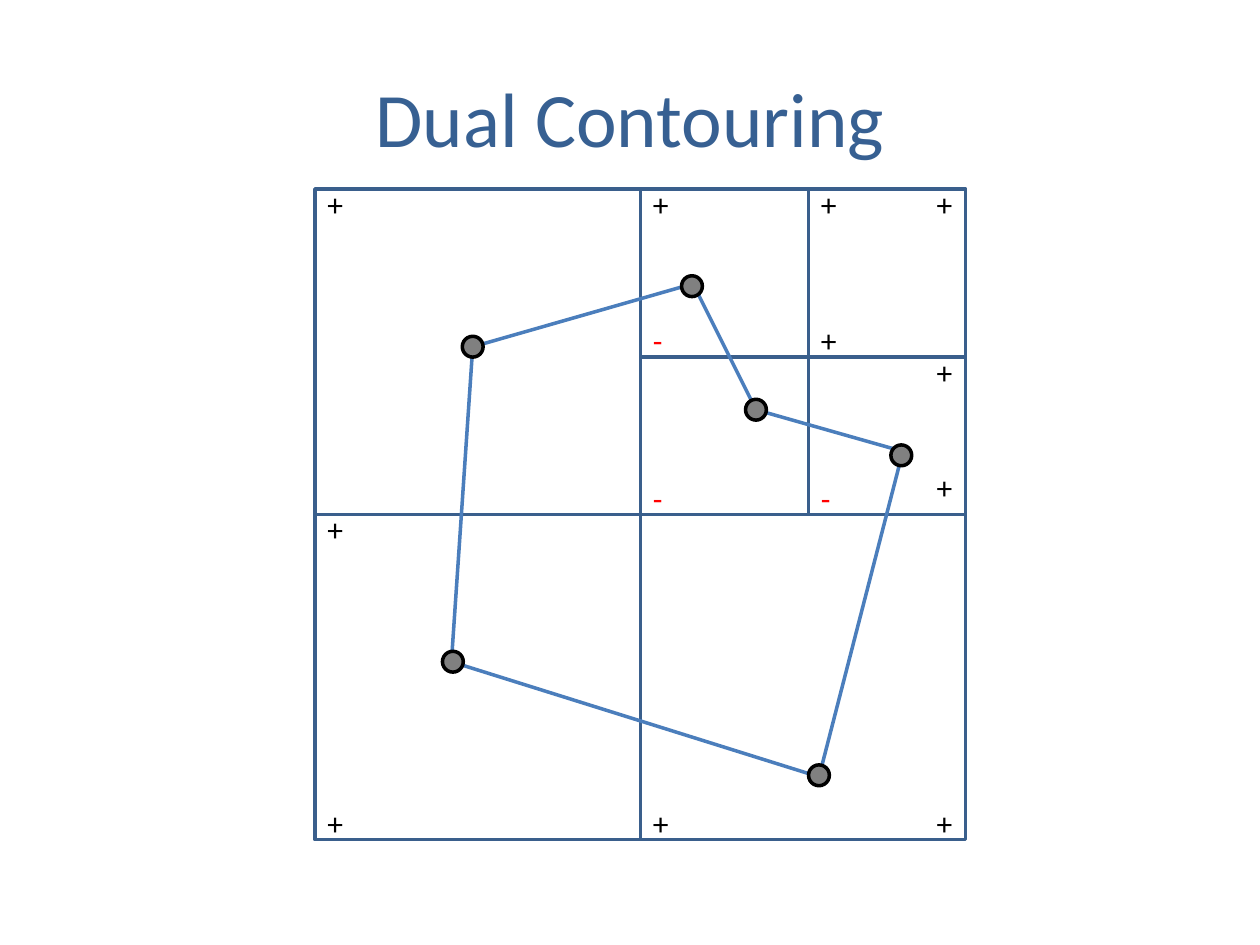
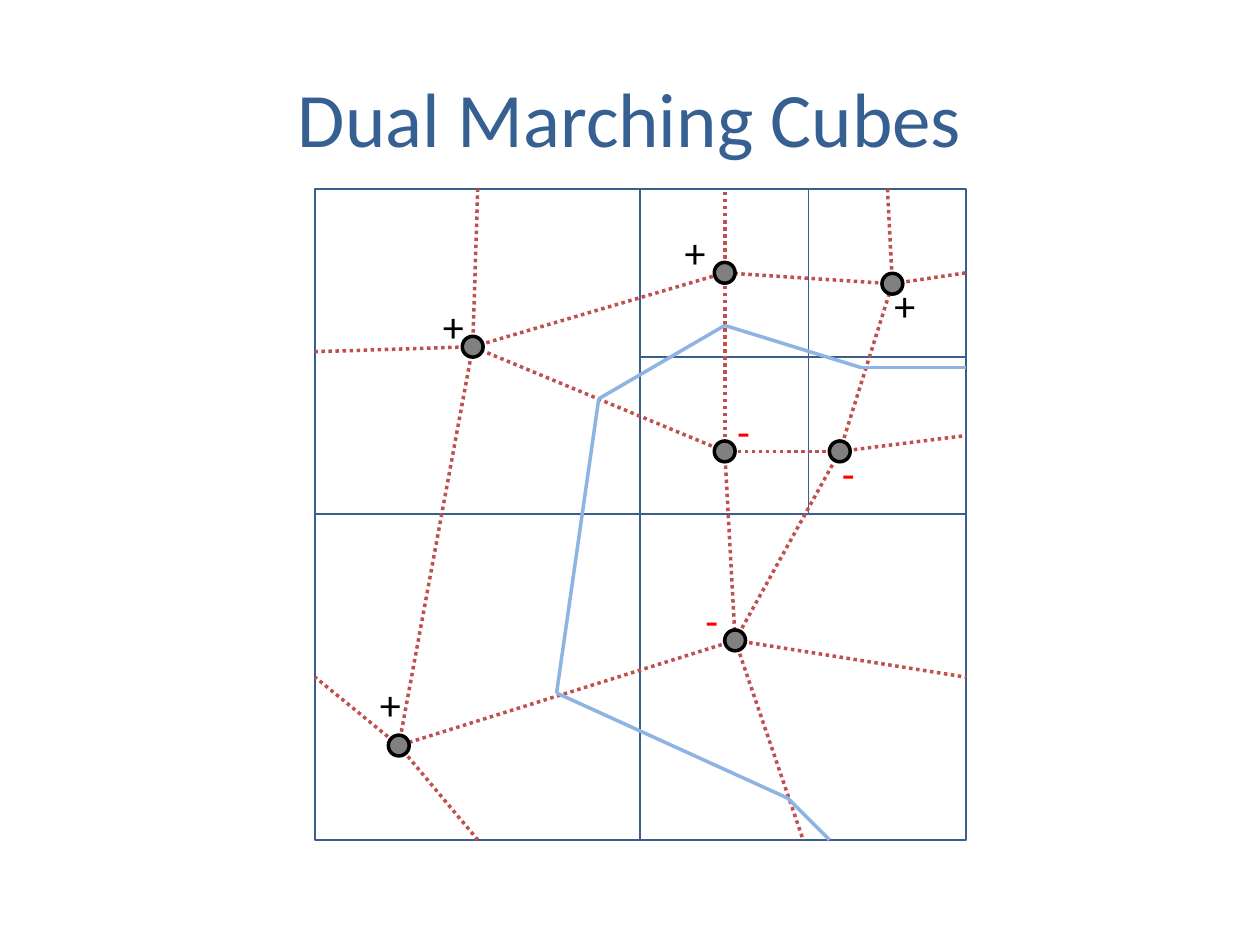
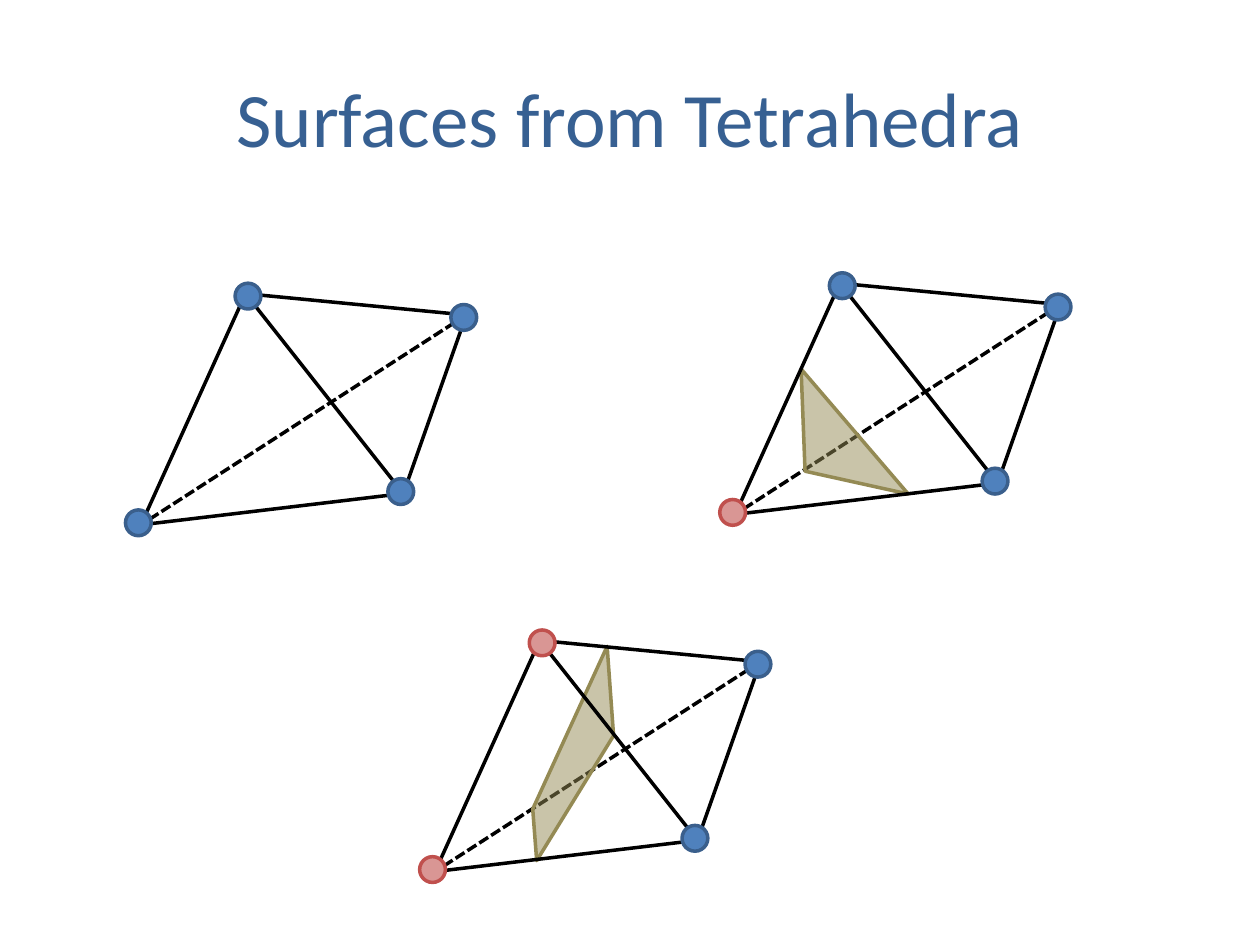
from itertools import pairwise

from lxml import etree
from pptx import Presentation
from pptx import util as u
from pptx.dml.color import RGBColor
from pptx.enum import dml, shapes, text
from pptx.oxml import ns

COLORS = {
    "title": "376092", "grid": "3A5F8C", "contour": "4B7EBC", "surface": "8EB4E3",
    "dual": "C0504D", "plus": "000000", "minus": "FF0000", "ink": "000000",
    "sample": "808080", "outside": "4F81BD", "outside_rim": "3A5F8C",
    "inside": "D99694", "inside_rim": "C0504D", "cut": "948A54",
}
FONT = "Calibri"
DOTTED = dml.MSO_LINE.ROUND_DOT
DASHED = dml.MSO_LINE.SQUARE_DOT


def style(shape, fill, rim, width=2):
    shape.shadow.inherit = False
    if fill:
        shape.fill.solid()
        shape.fill.fore_color.rgb = RGBColor.from_string(COLORS[fill])
    else:
        shape.fill.background()
    shape.line.color.rgb = RGBColor.from_string(COLORS[rim])
    shape.line.width = u.Pt(width)


def add_edge(parent, start, end, color, dash=None):
    edge = parent.add_connector(shapes.MSO_CONNECTOR.STRAIGHT,
                                *[u.Cm(value) for value in (*start, *end)])
    edge.line.color.rgb = RGBColor.from_string(COLORS[color])
    edge.line.width = u.Pt(2)
    if dash:
        edge.line.dash_style = dash
    etree.SubElement(edge._element.spPr, ns.qn("a:effectLst"))


prs = Presentation()
prs.slide_width, prs.slide_height = u.Cm(25.4), u.Cm(19.05)

# Titled slides
slides = []
for heading in ("Dual Contouring", "Dual Marching Cubes", "Surfaces from Tetrahedra"):
    slide = prs.slides.add_slide(prs.slide_layouts[5])
    title = slide.shapes.title
    title.left, title.top = u.Cm(1.27), u.Cm(0.76)
    title.width, title.height = u.Cm(22.86), u.Cm(3.18)
    title.text_frame.vertical_anchor = text.MSO_ANCHOR.MIDDLE
    paragraph = title.text_frame.paragraphs[0]
    paragraph.alignment = text.PP_ALIGN.CENTER
    run = paragraph.add_run()
    run.text = heading
    run.font.size, run.font.name = u.Pt(44), FONT
    run.font.color.rgb = RGBColor.from_string(COLORS["title"])
    slides.append(slide)

# Quadtree: grid lines, and cells as left, top, right, bottom line numbers
columns = (6.35, 12.91, 16.3, 19.47)
rows = (3.81, 7.2, 10.37, 16.93)
cells = ((0, 0, 1, 2), (0, 2, 1, 3), (1, 2, 3, 3), (1, 0, 2, 1),
         (1, 1, 2, 2), (2, 0, 3, 1), (2, 1, 3, 2))
left, right, top, bottom = columns[0], columns[-1], rows[0], rows[-1]

# Dual contouring: signs at cell corners, one vertex per crossed cell
corner_signs = [
    ("+", 6.35, 3.6), ("+", 12.91, 3.6), ("+", 16.3, 3.6), ("+", 18.63, 3.6),
    ("-", 12.91, 6.35), ("+", 16.3, 6.35), ("+", 18.63, 6.99),
    ("-", 12.91, 9.53), ("-", 16.3, 9.53), ("+", 18.63, 9.31),
    ("+", 6.35, 10.16), ("+", 6.35, 16.09), ("+", 12.91, 16.09), ("+", 18.63, 16.09),
]
contour = [(9.53, 6.99), (13.97, 5.72), (15.24, 8.26),
           (18.2, 9.1), (16.51, 15.66), (9.1, 13.34)]
contour_edges = [(*edge, "contour") for edge in pairwise(contour + contour[:1])]
contour_vertices = [(9.53, 6.99), (13.95, 5.77), (15.24, 8.26),
                    (18.17, 9.18), (16.51, 15.63), (9.13, 13.34)]

# Dual marching cubes: signs at samples, dual grid, surface across it
sample_signs = [
    ("+", 8.68, 5.93), ("-", 14.61, 8.04), ("+", 13.55, 4.45), ("+", 7.41, 13.55),
    ("+", 17.78, 5.5), ("-", 13.97, 11.85), ("-", 16.72, 8.89),
]
samples = {"NW": (9.53, 6.99), "N": (14.61, 5.5), "NE": (17.99, 5.72),
           "E": (16.93, 9.1), "mid": (14.61, 9.1), "SE": (14.82, 12.91),
           "SW": (8.04, 15.03)}
neighbours = [("NW", "N"), ("mid", "N"), ("NE", "N"), ("E", "NE"), ("E", "mid"),
              ("mid", "SE"), ("SE", "E"), ("SW", "NW"), ("SE", "SW"), ("mid", "NW")]
border_links = [
    ("SW", (9.63, bottom)), ("SW", (left, 13.65)), ("NW", (left, 7.09)),
    ("NW", (9.63, top)), ("SE", (16.19, bottom)), ("SE", (right, 13.65)),
    ("E", (right, 8.78)), ("NE", (right, 5.5)), ("N", (14.61, top)), ("NE", (17.89, top)),
]
surface = [(right, 7.41), (17.36, 7.41), (14.61, 6.56), (12.07, 8.04),
           (11.22, 13.97), (15.88, 16.09), (16.72, bottom)]
dual_edges = [(samples[a], samples[b], "dual", DOTTED) for a, b in neighbours]
dual_edges += [(samples[a], end, "dual", DOTTED) for a, end in border_links]
dual_edges += [(*edge, "surface") for edge in pairwise(surface)]

# Both quadtree slides: slide, grid width, sign size, sign height, signs, edges, vertices
diagrams = (
    (slides[0], 2, 18, 1.03, corner_signs, contour_edges, contour_vertices),
    (slides[1], 1, 24, 1.27, sample_signs, dual_edges, samples.values()),
)
for slide, grid_width, sign_size, sign_height, signs, edges, vertices in diagrams:
    for x0, y0, x1, y1 in cells:
        cell = slide.shapes.add_shape(
            shapes.MSO_SHAPE.RECTANGLE, u.Cm(columns[x0]), u.Cm(rows[y0]),
            u.Cm(columns[x1] - columns[x0]), u.Cm(rows[y1] - rows[y0]))
        style(cell, None, "grid", grid_width)
    for sign, x, y in signs:
        label = slide.shapes.add_textbox(u.Cm(x), u.Cm(y), u.Cm(0.85 if sign == "+" else 0.71),
                                         u.Cm(sign_height))
        label.text_frame.word_wrap = True
        label.text_frame.auto_size = text.MSO_AUTO_SIZE.SHAPE_TO_FIT_TEXT
        run = label.text_frame.paragraphs[0].add_run()
        run.text = sign
        run.font.size, run.font.name = u.Pt(sign_size), FONT
        run.font.color.rgb = RGBColor.from_string(COLORS["plus" if sign == "+" else "minus"])
    for edge in edges:
        add_edge(slide.shapes, *edge)
    for x, y in vertices:
        vertex = slide.shapes.add_shape(shapes.MSO_SHAPE.OVAL, u.Cm(x - 0.21), u.Cm(y - 0.21),
                                        u.Cm(0.42), u.Cm(0.42))
        style(vertex, "sample", "ink")

# Tetrahedra: one set of corners, shifted for each case
corners = {"top": (4.95, 5.92), "left": (2.84, 10.58),
           "bottom": (8.13, 9.95), "right": (9.4, 6.35)}
balls = {"top": (5, 5.97), "left": (2.79, 10.54),
         "right": (9.35, 6.4), "bottom": (8.08, 9.91)}
front_edges = (("top", "left"), ("left", "bottom"), ("bottom", "top"),
               ("top", "right"), ("right", "bottom"))
# Each case: shift right, shift down, inside corners, cut outline
cases = (
    (0, 0, (), ()),
    (11.98, -0.21, ("left",), ((16.15, 7.44), (18.31, 9.96), (16.23, 9.5))),
    (5.93, 6.99, ("top", "left"),
     ((12.24, 13.03), (12.37, 14.83), (10.82, 17.35), (10.74, 16.31))),
)
for dx, dy, inside, outline in cases:
    tetrahedron = slides[2].shapes.add_group_shape().shapes
    placed = {name: (x + dx, y + dy) for name, (x, y) in corners.items()}
    add_edge(tetrahedron, placed["right"], placed["left"], "ink", DASHED)
    if outline:
        points = [(u.Cm(x), u.Cm(y)) for x, y in outline]
        builder = tetrahedron.build_freeform(*points[0])
        builder.add_line_segments(points[1:], close=True)
        cut = builder.convert_to_shape()
        style(cut, "cut", "cut")
        tint = cut._element.spPr.find(ns.qn("a:solidFill"))[0]
        etree.SubElement(tint, ns.qn("a:alpha"), val="50000")
    for start, end in front_edges:
        add_edge(tetrahedron, placed[start], placed[end], "ink")
    for name, (x, y) in balls.items():
        ball = tetrahedron.add_shape(shapes.MSO_SHAPE.OVAL, u.Cm(x + dx - 0.26),
                                     u.Cm(y + dy - 0.26), u.Cm(0.52), u.Cm(0.52))
        side = "inside" if name in inside else "outside"
        style(ball, side, side + "_rim")

prs.save("out.pptx")
